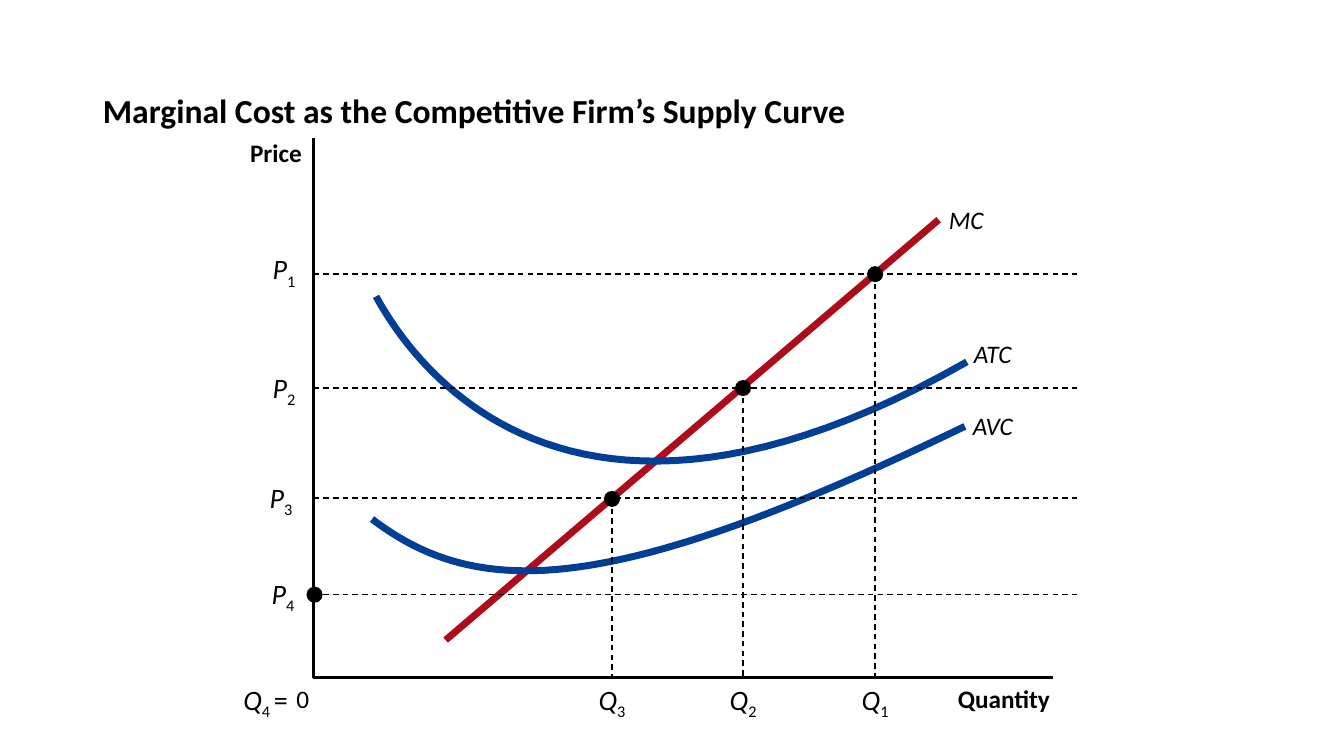
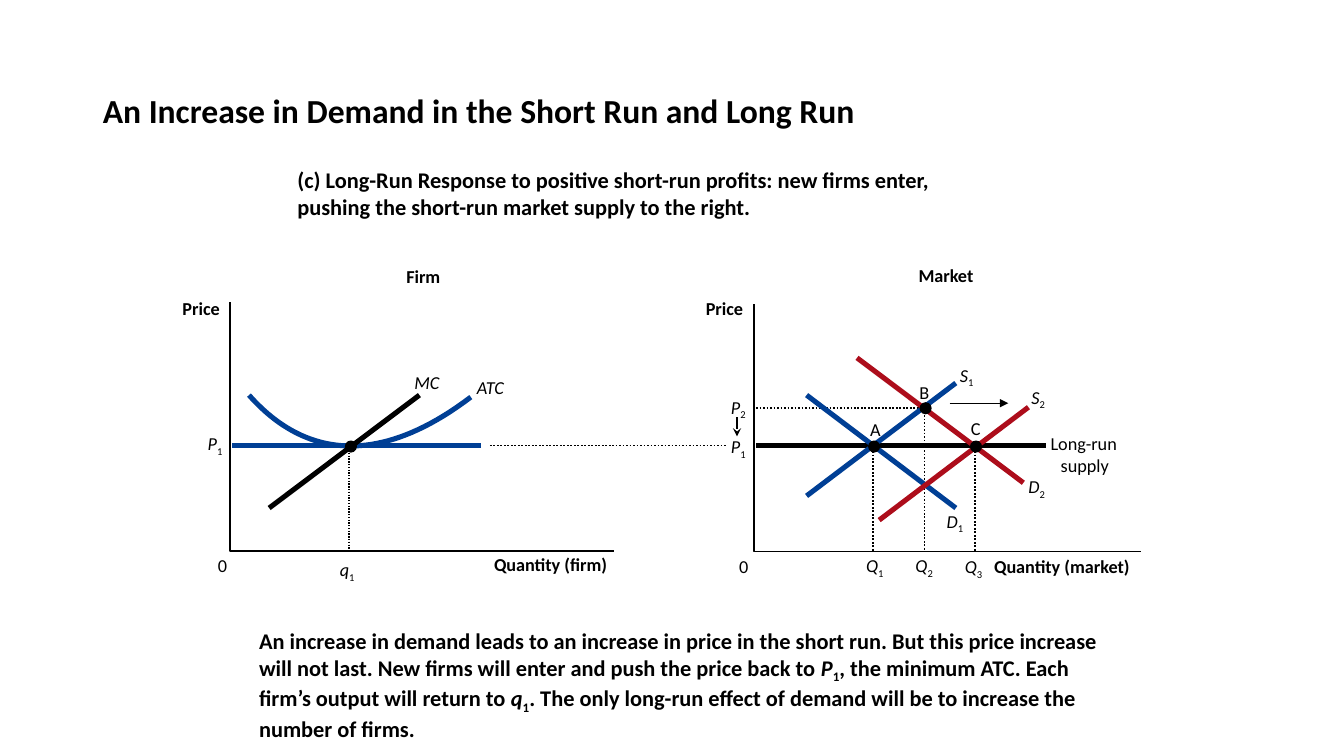
from dataclasses import dataclass

from lxml.etree import SubElement
from pptx import Presentation
from pptx.dml.color import RGBColor
from pptx.enum.dml import MSO_LINE
from pptx.enum.shapes import MSO_CONNECTOR, MSO_SHAPE
from pptx.enum.text import MSO_ANCHOR, PP_ALIGN
from pptx.oxml.ns import qn
from pptx.util import Inches, Pt


@dataclass(frozen=True)
class Theme:
    font: str = "Calibri"
    black: RGBColor = RGBColor(0x00, 0x00, 0x00)
    red: RGBColor = RGBColor(0xAD, 0x0D, 0x1B)
    blue: RGBColor = RGBColor(0x00, 0x3F, 0x95)
    title: int = 24
    symbol: int = 20
    label: int = 18
    body: int = 16
    small: int = 13


theme = Theme()
DASH, DOT = MSO_LINE.DASH, MSO_LINE.ROUND_DOT
LEFT, CENTER, RIGHT = PP_ALIGN.LEFT, PP_ALIGN.CENTER, PP_ALIGN.RIGHT


def add_text(slide, box, paragraphs, size, align=LEFT, wrap=False):
    """Each paragraph lists (text, style) runs: b bold, i italic, s subscript."""
    frame = slide.shapes.add_textbox(*map(Inches, box)).text_frame
    frame.word_wrap = wrap
    frame.margin_left = frame.margin_right = frame.margin_top = frame.margin_bottom = 0
    for index, runs in enumerate(paragraphs):
        paragraph = frame.add_paragraph() if index else frame.paragraphs[0]
        paragraph.alignment = align
        for text, style in runs:
            run = paragraph.add_run()
            run.text = text
            run.font.name = theme.font
            run.font.size = Pt(size)
            run.font.color.rgb = theme.black
            run.font.bold = "b" in style
            run.font.italic = "i" in style
            if "s" in style:
                run._r.get_or_add_rPr().set("baseline", "-25000")
    return frame


def add_stroke(slide, points, color, width, dash=None, arrow=None):
    """Two points make a line, three a polyline, four a Bézier curve."""
    if len(points) == 2:
        shape = slide.shapes.add_connector(
            MSO_CONNECTOR.STRAIGHT, *(Inches(value) for point in points for value in point))
    else:
        if len(points) == 4:
            steps = [step / 48 for step in range(49)]
            points = [
                tuple((1 - t) ** 3 * a + 3 * (1 - t) ** 2 * t * b + 3 * (1 - t) * t ** 2 * c + t ** 3 * d
                      for a, b, c, d in zip(*points))
                for t in steps]
        corners = [(Inches(x), Inches(y)) for x, y in points]
        builder = slide.shapes.build_freeform(*corners[0])
        builder.add_line_segments(corners[1:], close=False)
        shape = builder.convert_to_shape()
        shape.fill.background()
        shape.shadow.inherit = False
    shape.line.color.rgb = color
    shape.line.width = Pt(width)
    if dash:
        shape.line.dash_style = dash
    if arrow:
        SubElement(shape.line._get_or_add_ln(), qn("a:tailEnd"), type=arrow)
    if len(points) == 2:
        SubElement(shape._element.spPr, qn("a:effectLst"))


# Supply curve slide: axes and cost curves
supply_strokes = [
    ([(3.11, 1.37), (3.11, 6.72), (10.44, 6.72)], theme.black, 1.63),
    ([(4.42, 6.35), (9.31, 2.18)], theme.red, 5),
    ([(3.73, 2.94), (4.07, 3.56), (5.59, 5.87), (9.59, 3.59)], theme.blue, 5),
    ([(3.69, 5.15), (4.75, 5.96), (6.08, 5.92), (9.57, 4.23)], theme.blue, 5),
]
supply_labels = [
    ((9.5, 6.78, 0.92, 0.3), [("Quantity", "b")], theme.label),
    ((2.94, 6.78, 0.13, 0.3), [("0", "")], theme.label),
    ((2.48, 1.36, 0.52, 0.3), [("Price", "b")], theme.label),
    ((9.41, 2.03, 0.35, 0.3), [("MC", "i")], theme.label),
    ((9.66, 3.36, 0.38, 0.3), [("ATC", "i")], theme.label),
    ((9.65, 4.07, 0.4, 0.3), [("AVC", "i")], theme.label),
    ((2.3, 6.77, 0.67, 0.34), [("Q", "i"), ("4 ", "s"), ("=", "")], theme.symbol, CENTER, True),
]

# Price levels and the quantities they lead to
for number, y, left, top in [("1", 2.72, 2.36, 2.5), ("2", 3.85, 2.36, 3.68),
                             ("3", 4.94, 2.33, 4.77), ("4", 5.9, 2.35, 5.72)]:
    supply_strokes.append(([(3.11, y), (10.68, y)], theme.black, 1, DASH))
    supply_labels.append(((left, top, 0.57, 0.34), [("P", "i"), (number, "s")],
                          theme.symbol, RIGHT, True))
for number, x, y in [("1", 8.68, 2.72), ("2", 7.37, 3.85), ("3", 6.07, 4.95)]:
    supply_strokes.append(([(x, y), (x, 6.73)], theme.black, 1, DASH))
    supply_labels.append(((x - 0.285, 6.77, 0.57, 0.34), [("Q", "i"), (number, "s")],
                          theme.symbol, CENTER, True))

# Demand slide: firm on the left, market on the right
demand_strokes = [
    ([(2.28, 3), (2.28, 5.47), (6.09, 5.47)], theme.black, 1.25),
    ([(4.77, 4.42), (2.3, 4.42)], theme.blue, 3.63),
    ([(2.47, 3.92), (2.85, 4.35), (3.55, 4.79), (4.67, 3.94)], theme.blue, 3.63),
    ([(4.86, 4.42), (7.21, 4.42)], theme.black, 1.25, DOT),
    ([(2.67, 5.04), (4.16, 3.92)], theme.black, 3.63),
    ([(3.46, 4.41), (3.46, 5.46)], theme.black, 1, DOT),
    ([(7.48, 3.02), (7.48, 5.47), (11.32, 5.47)], theme.black, 1.25),
    ([(7.5, 4.05), (9.17, 4.05)], theme.black, 1.25, DOT),
    ([(9.17, 4.05), (9.17, 5.47)], theme.black, 1.25, DOT),
    ([(8.66, 4.44), (8.66, 5.47)], theme.black, 1.25, DOT),
    ([(9.67, 4.44), (9.67, 5.47)], theme.black, 1.25, DOT),
    ([(10.37, 4.42), (7.5, 4.42)], theme.black, 3.63),
    ([(7.31, 4.14), (7.31, 4.33)], theme.black, 1.25, None, "stealth"),
    ([(9.48, 5.04), (8, 3.92)], theme.blue, 3.63),
    ([(8, 4.92), (9.48, 3.8)], theme.blue, 3.63),
    ([(10.15, 4.79), (8.5, 3.55)], theme.red, 3.63),
    ([(8.72, 5.16), (10.2, 4.04)], theme.red, 3.63),
    ([(9.42, 4), (10, 4)], theme.black, 1, None, "triangle"),
]
demand_labels = [
    ((2.95, 1.65, 7.57, 0.53),
     [("(c) Long-Run Response to positive short-run profits: new firms enter,", "b")],
     [("pushing the short-run market supply to the right.", "b")], theme.body, LEFT, True),
    ((2.57, 6.22, 8.56, 1.07),
     [("An increase in demand leads to an increase in price in the short run. But this price "
       "increase will not last. New firms will enter and push the price back to ", "b"),
      ("P", "bi"), ("1", "bs"),
      (", the minimum ATC. Each firm’s output will return to ", "b"),
      ("q", "bi"), ("1", "bs"),
      (". The only long-run effect of demand will be to increase the number of firms.", "b")],
     theme.body, LEFT, True),
]
for left, top, width, text, style in [
        (4.03, 2.63, 0.34, "Firm", "b"), (4.9, 5.49, 1.14, "Quantity (firm)", "b"),
        (1.81, 2.95, 0.38, "Price", "b"), (2.16, 5.5, 0.09, "0", ""),
        (4.11, 3.68, 0.25, "MC", "i"), (4.73, 3.73, 0.27, "ATC", "i"),
        (9.11, 2.62, 0.55, "Market", "b"), (9.86, 5.51, 1.36, "Quantity (market)", "b"),
        (7, 2.95, 0.38, "Price", "b"), (7.33, 5.51, 0.09, "0", ""),
        (10.42, 4.29, 0.67, "Long-run", ""), (10.52, 4.51, 0.49, "supply", ""),
        (8.63, 4.15, 0.11, "A", ""), (9.12, 3.78, 0.1, "B", ""), (9.63, 4.14, 0.1, "C", "")]:
    demand_labels.append(((left, top, width, 0.22), [(text, style)], theme.small))
for left, top, letter, number in [
        (2.06, 4.29, "P", "1"), (7.25, 4.32, "P", "1"), (7.25, 3.93, "P", "2"),
        (3.37, 5.54, "q", "1"), (8.59, 5.5, "Q", "1"), (9.08, 5.5, "Q", "2"),
        (9.57, 5.51, "Q", "3"), (9.39, 5.06, "D", "1"), (10.2, 4.72, "D", "2"),
        (9.52, 3.61, "S", "1"), (10.23, 3.83, "S", "2")]:
    demand_labels.append(((left, top, 0.2, 0.22), [(letter, "i"), (number, "s")], theme.small))

# Title, strokes, dot centres, dot diameter and labels of each slide
figures = [
    ("Marginal Cost as the Competitive Firm’s Supply Curve", supply_strokes,
     [(8.68, 2.72), (7.37, 3.85), (6.07, 4.95), (3.12, 5.9)], 0.16, supply_labels),
    ("An Increase in Demand in the Short Run and Long Run", demand_strokes,
     [(3.48, 4.43), (8.67, 4.43), (9.18, 4.05), (9.68, 4.43)], 0.12, demand_labels),
]

presentation = Presentation()
presentation.slide_width = Inches(13.33)
presentation.slide_height = Inches(7.5)

for title, strokes, dots, diameter, labels in figures:
    slide = presentation.slides.add_slide(presentation.slide_layouts[6])

    # Title
    frame = add_text(slide, (1.02, 0.4, 11.3, 1.45), [[(title, "b")]], theme.title, wrap=True)
    frame.vertical_anchor = MSO_ANCHOR.MIDDLE
    frame.paragraphs[0].line_spacing = 0.8

    # Axes, curves and guide lines
    for stroke in strokes:
        add_stroke(slide, *stroke)

    # Points of intersection
    for x, y in dots:
        dot = slide.shapes.add_shape(
            MSO_SHAPE.OVAL, Inches(x - diameter / 2), Inches(y - diameter / 2),
            Inches(diameter), Inches(diameter))
        dot.shadow.inherit = False
        dot.fill.solid()
        dot.fill.fore_color.rgb = theme.black
        dot.line.fill.background()

    # Labels: a box, its paragraphs, then the type size and layout
    for box, *parts in labels:
        paragraphs = [part for part in parts if isinstance(part, list)]
        add_text(slide, box, paragraphs, *parts[len(paragraphs):])

presentation.save("out.pptx")
